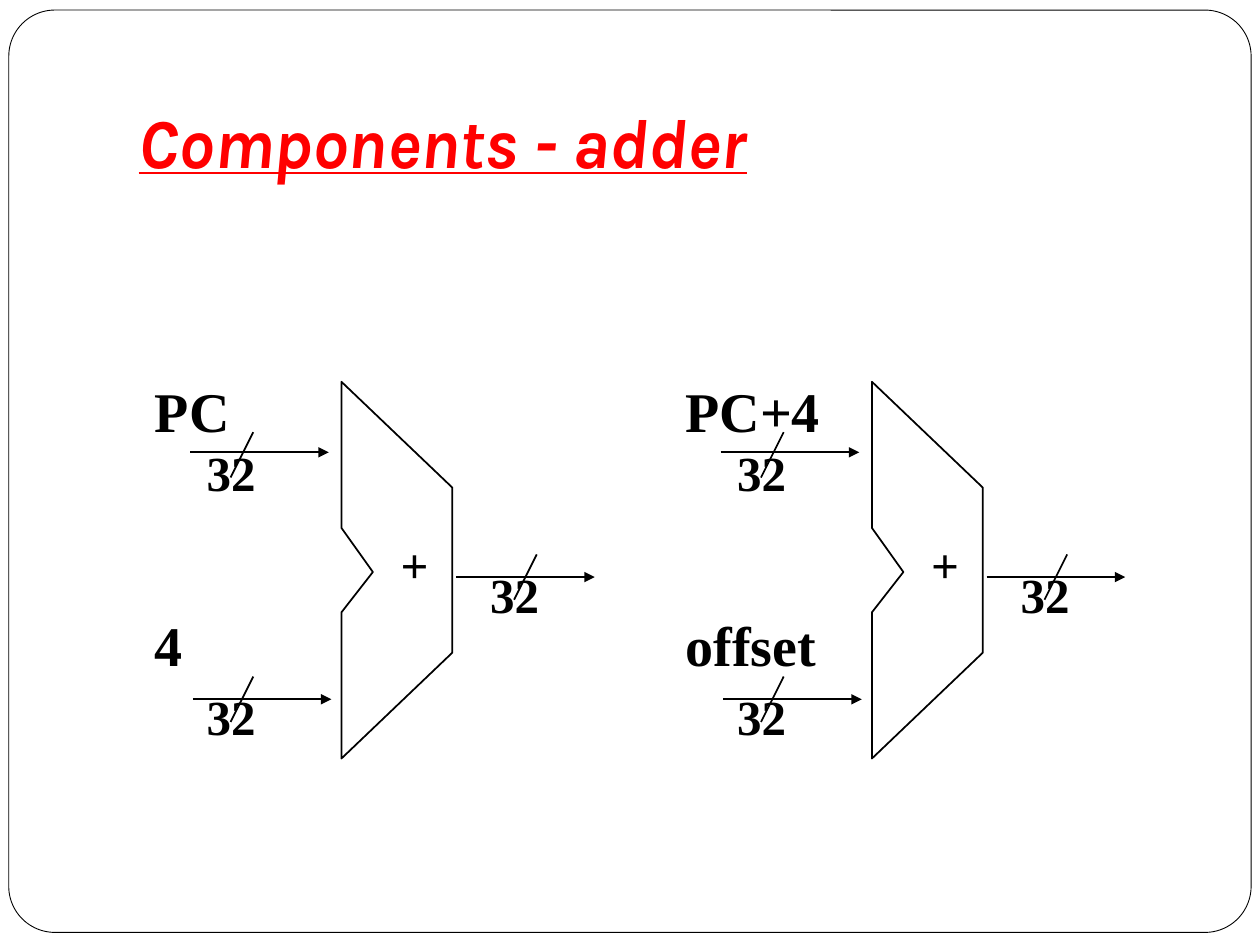
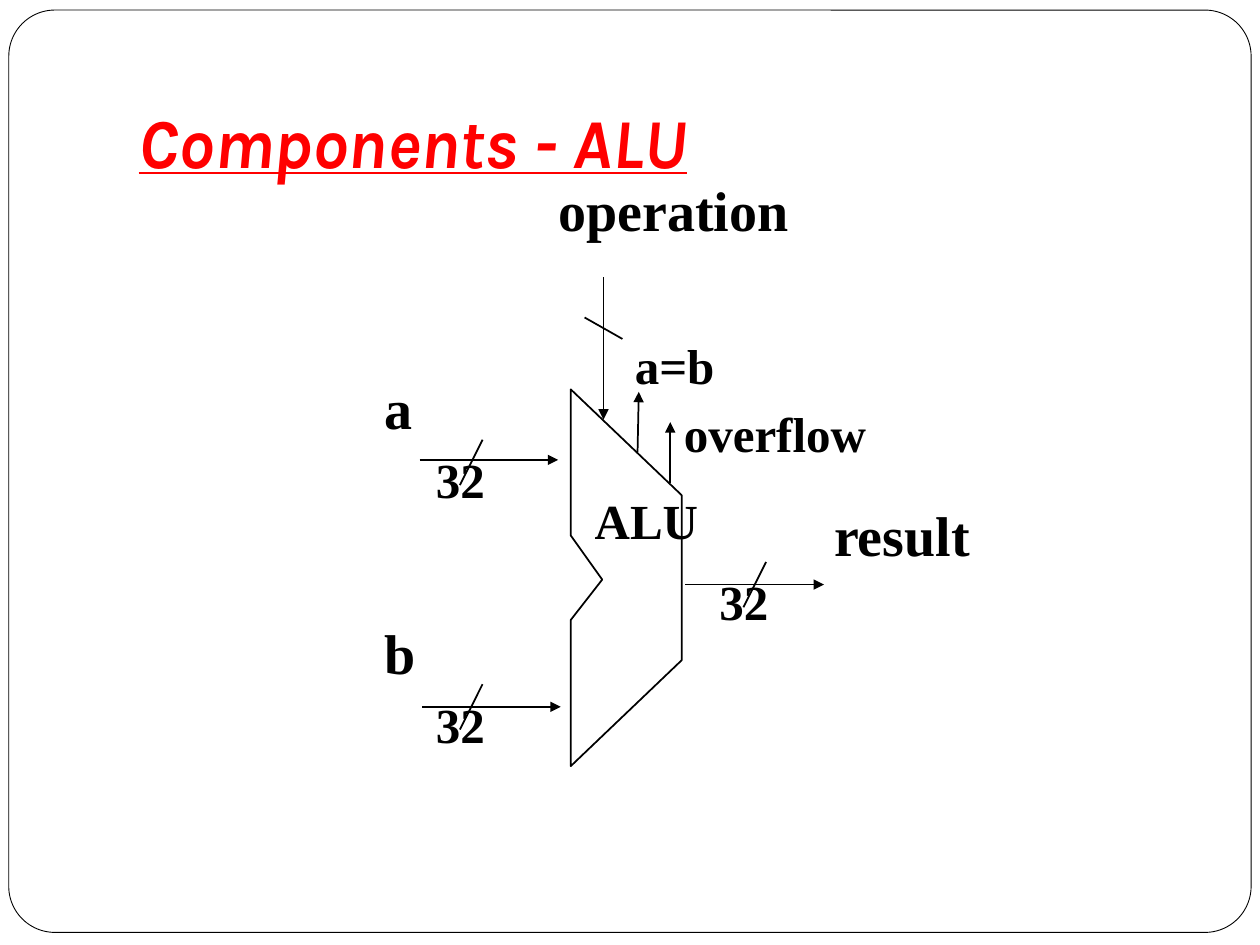
from lxml import etree
from pptx import Presentation
from pptx.dml.color import RGBColor
from pptx.enum.shapes import MSO_CONNECTOR, MSO_SHAPE
from pptx.enum.text import MSO_ANCHOR, MSO_AUTO_SIZE, PP_ALIGN
from pptx.oxml.ns import qn
from pptx.util import Pt

STRAIGHT = MSO_CONNECTOR.STRAIGHT
ROUNDED = MSO_SHAPE.ROUNDED_RECTANGLE
LEFT = PP_ALIGN.LEFT
TOP, BOTTOM = MSO_ANCHOR.TOP, MSO_ANCHOR.BOTTOM
FIXED, GROW = MSO_AUTO_SIZE.NONE, MSO_AUTO_SIZE.SHAPE_TO_FIT_TEXT

EMU_PER_PX = 9144  # 100 px to the inch
BLACK, WHITE, RED = "000000", "FFFFFF", "FF0000"
TITLE_FONT, LABEL_FONT = "Karla", "Times New Roman"
TITLE_ONLY = 5
ADDER_OUTLINE = [(0, 0), (0, 116), (25, 151), (0, 183),
                 (0, 299), (88, 215), (88, 84)]
# Start of each bus and top of its slash, from the top left of the adder
ADDER_BUSES = [((-120, 56), (-70, 40)),
               ((-118, 252), (-70, 234)),
               ((91, 155), (155, 137))]
BUS_LENGTH = 110
TIGHT, SIGN_INSETS, ROOMY = (2, 3, 2, 3), (2, 33, 2, 3), (10, 5, 10, 5)
# Line spacing, space before and space after, in points
NAME_SPACING, WIDTH_SPACING, SIGN_SPACING = (18, 6, 6), (12, 0, 0), (16, 16, 0)


def px(length):
    return length * EMU_PER_PX


def color(hex_string):
    return RGBColor.from_string(hex_string)


class Drawing:
    """The deck's style, its current slide and the current group of shapes."""

    def __init__(self):
        self.deck = Presentation()
        self.deck.slide_width = px(1000)
        self.deck.slide_height = px(750)

    def slide(self, title):
        layout = self.deck.slide_layouts[TITLE_ONLY]
        self.page = self.deck.slides.add_slide(layout)
        box = self.page.shapes.title
        self.place(box, 100, 30, 850, 125)
        frame = box.text_frame
        frame.text = title
        frame.auto_size = FIXED
        frame.vertical_anchor = BOTTOM
        self.insets(frame, (10, 5, 10, 10))
        font = self.font(frame.paragraphs[0], TITLE_FONT, 40, RED)
        font.italic = font.underline = True
        self.group()

    def group(self):
        self.shapes = self.page.shapes.add_group_shape().shapes

    def master_frame(self):
        """Move a rounded frame behind everything on the slide master."""
        frame = self.page.shapes.add_shape(
            ROUNDED, px(7), px(8), px(986), px(732))
        frame.adjustments[0] = 0.05
        self.outline(frame, 0.5)
        frame.element.nvSpPr.cNvPr.id = 20
        self.deck.slide_master.shapes[0].element.addprevious(frame.element)

    def place(self, shape, left, top, width, height):
        shape.left, shape.top = px(left), px(top)
        shape.width, shape.height = px(width), px(height)

    def outline(self, shape, weight):
        shape.shadow.inherit = False
        shape.fill.solid()
        shape.fill.fore_color.rgb = color(WHITE)
        shape.line.color.rgb = color(BLACK)
        shape.line.width = Pt(weight)

    def insets(self, frame, sides):
        (frame.margin_left, frame.margin_top,
         frame.margin_right, frame.margin_bottom) = map(px, sides)

    def font(self, para, name, size, hex_string):
        para.alignment = LEFT
        font = para.runs[0].font
        font.name, font.size, font.bold = name, Pt(size), True
        font.color.rgb = color(hex_string)
        return font

    def text(self, words, left, top, width, height, size=28,
             sides=TIGHT, spacing=None):
        """Add a label; without spacing the box grows with its text."""
        box = self.shapes.add_textbox(px(left), px(top), px(width), px(height))
        frame = box.text_frame
        frame.text = words
        frame.word_wrap = False
        frame.auto_size = FIXED if spacing else GROW
        frame.vertical_anchor = TOP
        self.insets(frame, sides)
        para = frame.paragraphs[0]
        if spacing:
            para.line_spacing, para.space_before, para.space_after = map(
                Pt, spacing)
        self.font(para, LABEL_FONT, size, BLACK)

    def name(self, words, left, top, width=72, spacing=NAME_SPACING):
        self.text(words, left, top, width, 86, size=32, spacing=spacing)

    def line(self, start, end, arrow=False):
        connector = self.shapes.add_connector(
            STRAIGHT, *map(px, start), *map(px, end))
        connector.line.color.rgb = color(BLACK)
        connector.line.width = Pt(1)
        if arrow:
            etree.SubElement(connector.line._get_or_add_ln(),
                             qn("a:tailEnd"), type="triangle")
        etree.SubElement(connector.element.spPr, qn("a:effectLst"))

    def bus(self, start, slash):
        """Draw an arrow with a slash and its width of 32 bits."""
        x, y = start
        slash_x, slash_y = slash
        self.line(start, (x + BUS_LENGTH, y), arrow=True)
        self.line(slash, (slash_x - 18, slash_y + 36))
        self.text("32", slash_x - 39, slash_y + 35, 84, 47,
                  spacing=WIDTH_SPACING)

    def adder(self, x, y, inputs, top_spacing=NAME_SPACING):
        """Draw the notched body at x, y with its buses and input names."""
        points = [(x + dx, y + dy) for dx, dy in ADDER_OUTLINE]
        builder = self.shapes.build_freeform(*points[0], scale=EMU_PER_PX)
        builder.add_line_segments(points[1:], close=True)
        self.outline(builder.convert_to_shape(), 1)
        for start, slash in ADDER_BUSES:
            self.bus((x + start[0], y + start[1]),
                     (x + slash[0], y + slash[1]))
        upper, lower = inputs
        self.name(upper, x - 150, y + 13, spacing=top_spacing)
        self.name(lower, x - 150, y + 207)

    def sign(self, words, left, top, width):
        self.text(words, left, top, width, 80,
                  sides=SIGN_INSETS, spacing=SIGN_SPACING)


def adder_slide(drawing):
    drawing.slide("Components - adder")
    drawing.master_frame()
    x, y = 271, 303
    for inputs in (("PC", "4"), ("PC+4", "offset")):
        drawing.adder(x, y, inputs, top_spacing=(24, 12, 6))
        drawing.sign("+", x + 45, y + 113, 37)
        drawing.group()
        x += 421
    # The last group stays empty
    last = drawing.page.shapes[-1].element
    last.getparent().remove(last)


def alu_slide(drawing):
    drawing.slide("Components - ALU")
    drawing.adder(453, 309, ("a", "b"))
    drawing.sign("ALU", 470, 381, 102)
    drawing.name("operation", 441, 165, 168)
    drawing.name("result", 660, 423, 113)
    drawing.line((479, 220), (479, 333), arrow=True)
    drawing.line((464, 252), (494, 269))
    drawing.line((532, 383), (532, 335), arrow=True)
    drawing.line((506, 359), (507, 311), arrow=True)
    drawing.text("a=b", 494, 261, 86, 57, sides=ROOMY)
    drawing.text("overflow", 533, 315, 167, 57, sides=ROOMY)


def main():
    drawing = Drawing()
    adder_slide(drawing)
    alu_slide(drawing)
    drawing.deck.save("out.pptx")


if __name__ == "__main__":
    main()
